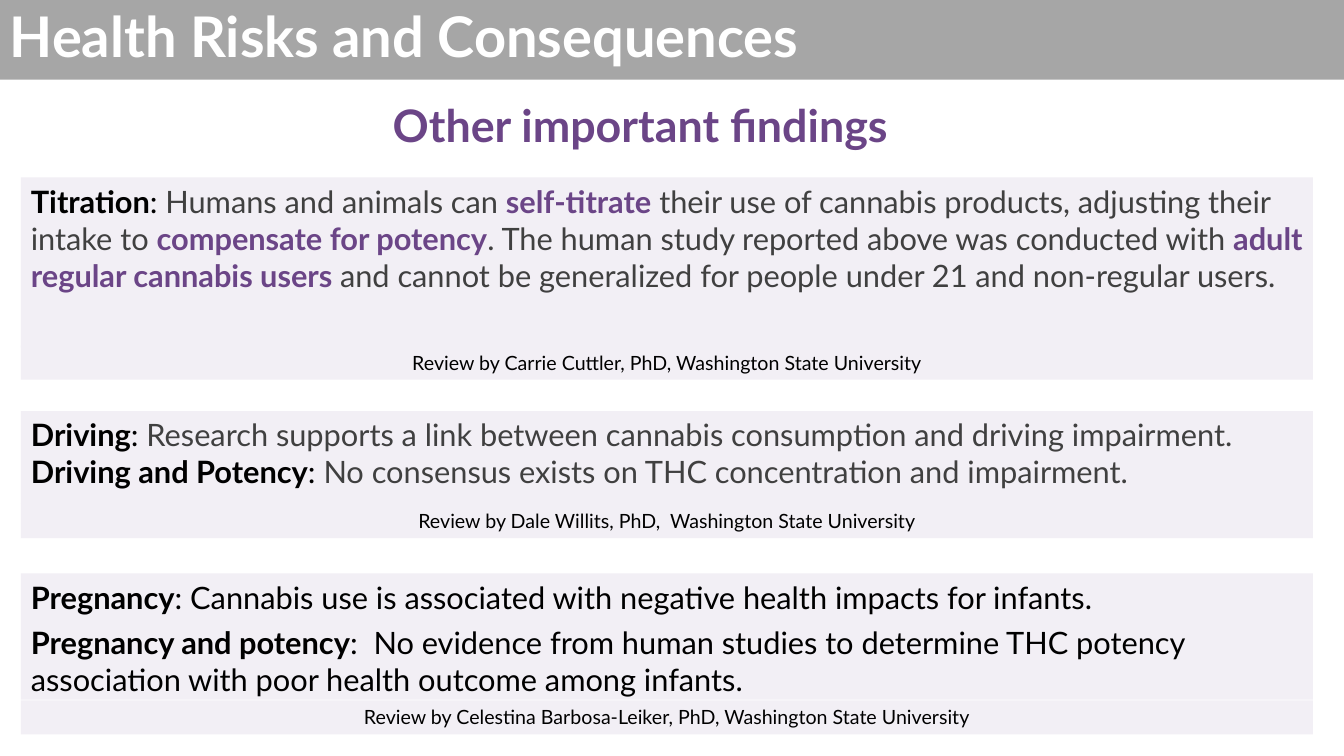
from pptx import Presentation
from pptx.dml.color import RGBColor
from pptx.enum.shapes import MSO_SHAPE
from pptx.enum.text import MSO_ANCHOR, MSO_AUTO_SIZE, PP_ALIGN
from pptx.util import Cm, Pt

BLACK, DARK_GRAY, PURPLE = "000000", "404040", "6B4587"
WHITE, BAND_GRAY, LAVENDER = "FFFFFF", "A6A6A6", "F2EFF5"
BOX_LEFT, BOX_WIDTH, REVIEW_HEIGHT = 0.53, 32.56, 0.86


def color(hex_string):
    return RGBColor.from_string(hex_string)


def write(shape, paragraphs, size=22, align=PP_ALIGN.LEFT, anchor=MSO_ANCHOR.TOP,
          line_spacing=None, space_after=0):
    """Fill a shape with paragraphs, each a list of (text, color, bold) runs."""
    frame = shape.text_frame
    frame.word_wrap = True
    frame.vertical_anchor = anchor
    for index, runs in enumerate(paragraphs):
        paragraph = frame.paragraphs[0] if index == 0 else frame.add_paragraph()
        paragraph.alignment = align
        if line_spacing:
            paragraph.line_spacing = line_spacing
        if index < len(paragraphs) - 1:
            paragraph.space_after = Pt(space_after)
        for text, hex_string, bold in runs:
            run = paragraph.add_run()
            run.text = text
            run.font.name = "Lato"
            run.font.size = Pt(size)
            run.font.bold = bold
            run.font.color.rgb = color(hex_string)


presentation = Presentation()
presentation.slide_width = Cm(33.87)
presentation.slide_height = Cm(19.05)
slide = presentation.slides.add_slide(presentation.slide_layouts[6])

findings = [
    # top, height, review top, space after, paragraphs, review
    (4.47, 4.29, 8.71, 0, [[
        ("Titration", BLACK, True),
        (": ", BLACK, False),
        ("Humans and animals can ", DARK_GRAY, False),
        ("self-titrate", PURPLE, True),
        (" their use of cannabis products, adjusting their intake to ", DARK_GRAY, False),
        ("compensate for potency", PURPLE, True),
        (". The human study reported above was conducted with ", DARK_GRAY, False),
        ("adult regular cannabis users ", PURPLE, True),
        ("and cannot be generalized for people under 21 and non-regular users.",
         DARK_GRAY, False),
    ]], "Review by Carrie Cuttler, PhD, Washington State University"),
    (10.36, 2.34, 12.7, 0, [[
        ("Driving", BLACK, True),
        (": ", BLACK, False),
        ("Research supports a link between cannabis consumption and driving impairment.",
         DARK_GRAY, False),
    ], [
        ("Driving and Potency", BLACK, True),
        (": ", BLACK, False),
        ("No consensus exists on THC concentration and impairment.", DARK_GRAY, False),
    ]], "Review by Dale Willits, PhD,  Washington State University"),
    (14.45, 3.18, 17.65, 6, [[
        ("Pregnancy", BLACK, True),
        (": Cannabis use is associated with negative health impacts for infants.",
         BLACK, False),
    ], [
        ("Pregnancy and potency", BLACK, True),
        (":  No evidence from human studies to determine THC potency association "
         "with poor health outcome among infants.", BLACK, False),
    ]], "Review by Celestina Barbosa-Leiker, PhD, Washington State University"),
]

# Each rectangle: left, top, width, height, fill, paragraphs, text format
rectangles = [(0, 0, 33.87, 2.01, BAND_GRAY,
               [[("Health Risks and Consequences", WHITE, True)]],
               {"size": 40, "anchor": MSO_ANCHOR.MIDDLE, "line_spacing": 0.9})]
for top, height, review_top, space_after, paragraphs, review in findings:
    rectangles.append((BOX_LEFT, top, BOX_WIDTH, height, LAVENDER, paragraphs,
                       {"space_after": space_after}))
    rectangles.append((BOX_LEFT, review_top, BOX_WIDTH, REVIEW_HEIGHT, LAVENDER,
                       [[(review, BLACK, False)]],
                       {"size": 14, "align": PP_ALIGN.CENTER}))

for left, top, width, height, fill, paragraphs, text_format in rectangles:
    shape = slide.shapes.add_shape(MSO_SHAPE.RECTANGLE, Cm(left), Cm(top),
                                   Cm(width), Cm(height))
    shape.shadow.inherit = False
    shape.fill.solid()
    shape.fill.fore_color.rgb = color(fill)
    shape.line.fill.background()
    write(shape, paragraphs, **text_format)
    if height == REVIEW_HEIGHT:
        shape.text_frame.auto_size = MSO_AUTO_SIZE.SHAPE_TO_FIT_TEXT

subtitle = slide.shapes.add_textbox(Cm(BOX_LEFT), Cm(2.59), Cm(31.22), Cm(1.45))
write(subtitle, [[("Other important findings", PURPLE, True)]], size=32,
      align=PP_ALIGN.CENTER, line_spacing=0.8)

presentation.save("out.pptx")
